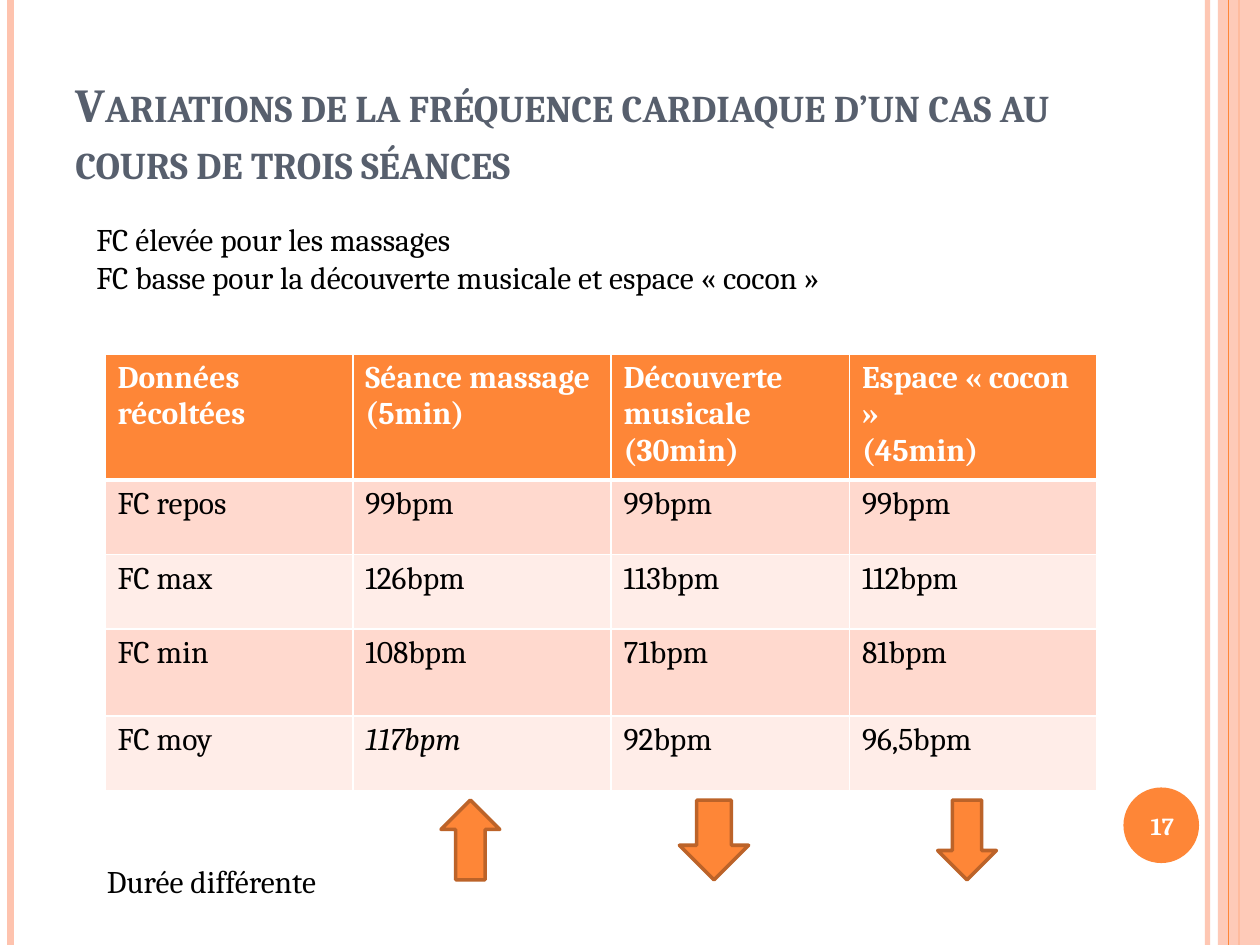
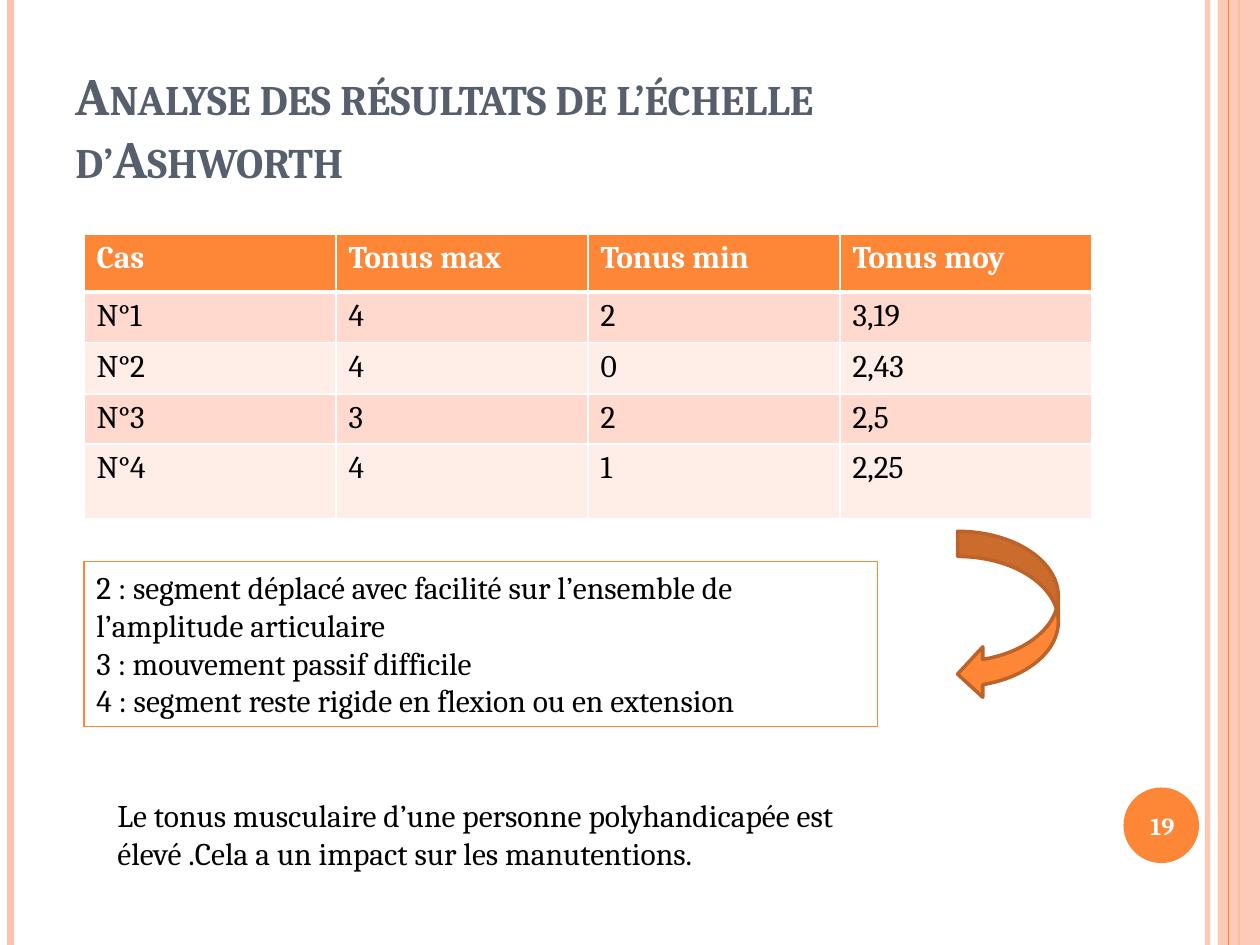
import pptx
import pptx.util
import pptx.dml.color
import pptx.enum.shapes
import pptx.enum.text
import pptx.oxml
import pptx.oxml.ns

# Grid: 120 columns by 90 rows over a 10 x 7.5 inch slide
COLUMNS, ROWS = 120, 90
WIDTH, HEIGHT = pptx.util.Inches(10), pptx.util.Inches(7.5)
FONT = "Cambria"
COLORS = {
    "orange": "FE8637", "peach": "FEC3AE", "brown": "BC6329", "slate": "575F6D",
    "dark": "FFD9CE", "light": "FFEDE8", "white": "FFFFFF", "black": "000000",
}
KINDS = pptx.enum.shapes.MSO_SHAPE
ANCHORS = pptx.enum.text.MSO_ANCHOR
CENTER = pptx.enum.text.PP_ALIGN.CENTER

# Content: every "at" is left, top, width, height in grid units
SLIDES = [
    {
        "number": "17",
        "title": "Variations de la fréquence cardiaque d’un cas au cours de trois séances",
        "title_size": 27,
        "table": {
            "at": (10, 33.7),
            "columns": [23.6, 24.6, 22.7, 23.6],
            "rows": [10.4, 7.1, 7.1, 8.3, 7.1],
            "cells": [
                ["Données récoltées", "Séance massage (5min)",
                 "Découverte musicale (30min)", "Espace « cocon »\n(45min)"],
                ["FC repos", "99bpm", "99bpm", "99bpm"],
                ["FC max", "126bpm", "113bpm", "112bpm"],
                ["FC min", "108bpm", "71bpm", "81bpm"],
                ["FC moy", "117bpm", "92bpm", "96,5bpm"],
            ],
            "italic": "117bpm",
        },
        "arrows": [
            (KINDS.UP_ARROW, (42, 76.2, 5.6, 7.6)),
            (KINDS.DOWN_ARROW, (64.7, 76.2, 6.6, 7.6)),
            (KINDS.DOWN_ARROW, (89.3, 76.2, 5.6, 7.6)),
        ],
        "texts": [
            {"at": (8, 20.4, 99.2, 12.1),
             "text": "FC élevée pour les massages\n"
                     "FC basse pour la découverte musicale et espace « cocon »"},
            {"at": (9, 81.5, 89.8, 8.5), "text": "Durée différente"},
        ],
    },
    {
        "number": "19",
        "title": "Analyse des résultats de l’échelle d’Ashworth",
        "title_size": 30,
        "table": {
            "at": (8, 22.3),
            "columns": [24] * 4,
            "rows": [5.5, 4.4, 4.9, 4.4, 7.1],
            "cells": [
                ["Cas", "Tonus max", "Tonus min", "Tonus moy"],
                ["N°1", "4", "2", "3,19"],
                ["N°2", "4", "0", "2,43"],
                ["N°3", "3", "2", "2,5"],
                ["N°4", "4", "1", "2,25"],
            ],
        },
        "arrows": [(KINDS.CURVED_LEFT_ARROW, (91.2, 50.6, 9.6, 16))],
        "texts": [
            {"at": (8, 53.5, 75.6, 15.7), "outline": "orange",
             "text": "2 : segment déplacé avec facilité sur l’ensemble de l’amplitude articulaire\n"
                     "3 : mouvement passif difficile\n"
                     "4 : segment reste rigide en flexion ou en extension"},
            {"at": (10, 75.2, 82.2, 8.5),
             "text": "Le tonus musculaire d’une personne polyhandicapée est élevé ."
                     "Cela a un impact sur les manutentions."},
        ],
    },
]

# Side bands: column, colour, width in points, opacity in percent
LINES_BEHIND = [(115, "peach", 3, 93), (1, "peach", 4.5, 100), (118, "orange", 1.5, 100)]
LINES_FRONT = [(117, "orange", 0.75, 100)]


def across(columns):
    return round(WIDTH * columns / COLUMNS)


def down(rows):
    return round(HEIGHT * rows / ROWS)


def place(left, top, width, height):
    return across(left), down(top), across(width), down(height)


def color(name):
    return pptx.dml.color.RGBColor.from_string(COLORS[name])


def set_opacity(element, percent):
    for value in element.iter(pptx.oxml.ns.qn("a:srgbClr")):
        alpha = value.makeelement(pptx.oxml.ns.qn("a:alpha"), {"val": str(percent * 1000)})
        value.append(alpha)


def write(frame, text, size=18, ink="black", bold=False, italic=False,
          small_caps=False, align=None, anchor=ANCHORS.TOP):
    frame.word_wrap = True
    frame.vertical_anchor = anchor
    for index, line in enumerate(text.split("\n")):
        para = frame.add_paragraph() if index else frame.paragraphs[0]
        para.alignment = align
        span = para.add_run()
        span.text = line
        span.font.name, span.font.size = FONT, pptx.util.Pt(size)
        span.font.bold, span.font.italic = bold, italic
        span.font.color.rgb = color(ink)
        if small_caps:
            span.font._element.set("cap", "small")


def add_text(page, at, text, outline=None, **style):
    box = page.shapes.add_textbox(*place(*at))
    if outline:
        box.line.color.rgb = color(outline)
        box.line.width = pptx.util.Pt(0.75)
    write(box.text_frame, text, **style)


def add_filled(page, kind, at, fill, outline=None):
    shape = page.shapes.add_shape(kind, *place(*at))
    shape.shadow.inherit = False
    shape.fill.solid()
    shape.fill.fore_color.rgb = color(fill)
    if outline:
        shape.line.color.rgb = color(outline)
        shape.line.width = pptx.util.Pt(2)
    else:
        shape.line.fill.background()
    return shape


def add_side_lines(page, lines):
    for column, ink, width, opacity in lines:
        x = across(column)
        line = page.shapes.add_connector(
            pptx.enum.shapes.MSO_CONNECTOR.STRAIGHT, x, 0, x, HEIGHT)
        line.line.color.rgb = color(ink)
        line.line.width = pptx.util.Pt(width)
        properties = line._element.spPr
        properties.append(properties.makeelement(pptx.oxml.ns.qn("a:effectLst"), {}))
        if opacity < 100:
            set_opacity(properties, opacity)


def add_frame(page, content):
    # Bands, page number and title shared by all slides
    add_side_lines(page, LINES_BEHIND)
    band = add_filled(page, KINDS.RECTANGLE, (116, 0, 4, ROWS), "peach")
    set_opacity(band._element.spPr, 87)
    add_side_lines(page, LINES_FRONT)
    add_filled(page, KINDS.OVAL, (107, 75, 7.2, 7.2), "orange")
    add_text(page, (106.7, 75.2, 8, 6.8), content["number"], size=14, ink="white",
             bold=True, align=CENTER, anchor=ANCHORS.MIDDLE)
    add_text(page, (6, 3.6, 98, 15), content["title"], size=content["title_size"],
             ink="slate", bold=True, small_caps=True, anchor=ANCHORS.BOTTOM)


def set_borders(cell, widths):
    properties = cell._tc.get_or_add_tcPr()
    for index, (side, points) in enumerate(widths.items()):
        border = pptx.oxml.parse_xml(
            f'<a:ln{side} {pptx.oxml.ns.nsdecls("a")} w="{pptx.util.Pt(points)}">'
            f'<a:solidFill><a:srgbClr val="{COLORS["white"]}"/></a:solidFill></a:ln{side}>')
        properties.insert(index, border)


def add_data_table(page, at, columns, rows, cells, italic=None):
    table = page.shapes.add_table(
        len(rows), len(columns), *place(*at, sum(columns), sum(rows))).table
    for column, width in zip(table.columns, columns):
        column.width = across(width)
    for number, (row, height, texts) in enumerate(zip(table.rows, rows, cells)):
        row.height = down(height)
        header = number == 0
        fill = "orange" if header else ("light", "dark")[number % 2]
        for cell, text in zip(row.cells, texts):
            cell.fill.solid()
            cell.fill.fore_color.rgb = color(fill)
            set_borders(cell, {"L": 1, "R": 1, "T": 3 if number == 1 else 1,
                               "B": 3 if header else 1})
            write(cell.text_frame, text, ink="white" if header else "black",
                  bold=header, italic=text == italic)


def main():
    deck = pptx.Presentation()
    deck.slide_width, deck.slide_height = WIDTH, HEIGHT
    for content in SLIDES:
        page = deck.slides.add_slide(deck.slide_layouts[6])
        add_frame(page, content)
        add_data_table(page, **content["table"])
        for kind, at in content["arrows"]:
            add_filled(page, kind, at, "orange", outline="brown")
        for text in content["texts"]:
            add_text(page, **text)
    deck.save("out.pptx")


if __name__ == "__main__":
    main()
